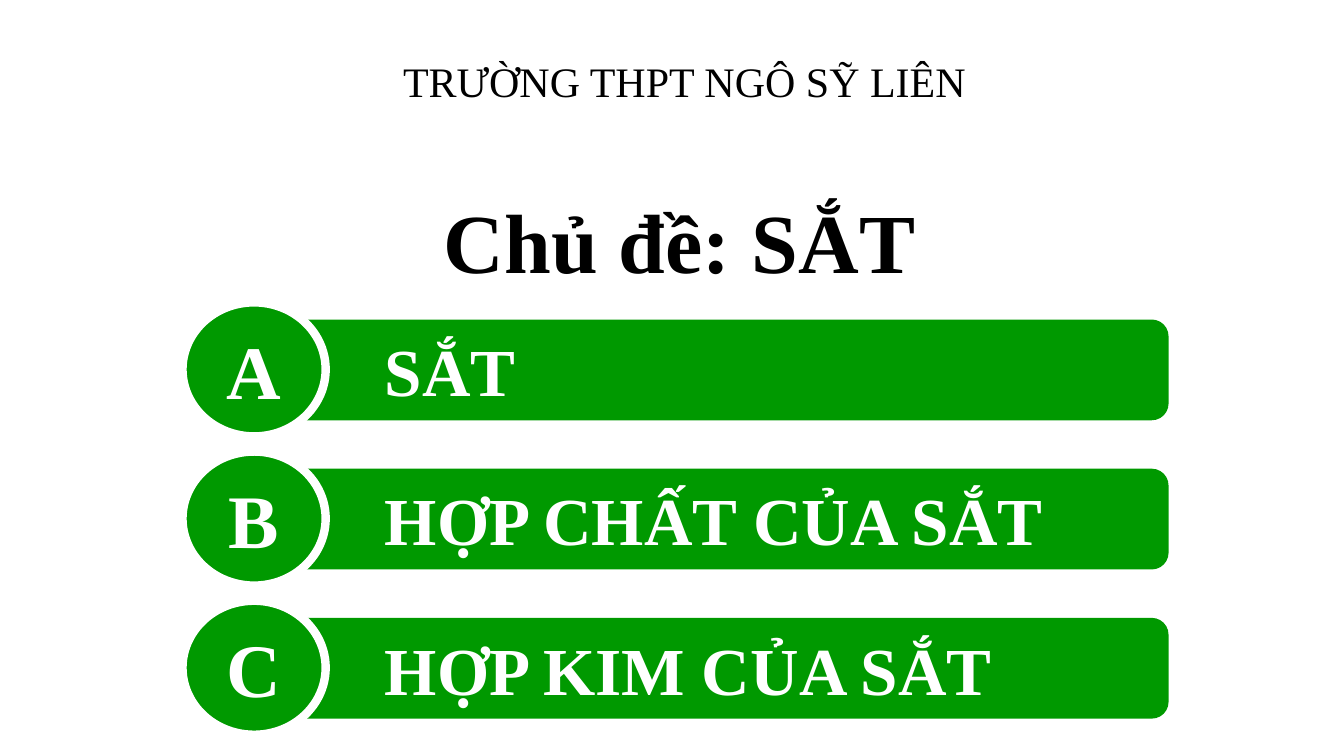
"""Build the title slide for the topic of iron with its three sections."""
from dataclasses import dataclass

from pptx import Presentation
from pptx.dml.color import RGBColor
from pptx.enum.shapes import MSO_SHAPE
from pptx.enum.text import MSO_ANCHOR, MSO_AUTO_SIZE, PP_ALIGN
from pptx.shapes.autoshape import Shape
from pptx.slide import Slide
from pptx.util import Inches, Pt

ROUNDED = MSO_SHAPE.ROUNDED_RECTANGLE
OVAL = MSO_SHAPE.OVAL
MIDDLE = MSO_ANCHOR.MIDDLE
GROW = MSO_AUTO_SIZE.SHAPE_TO_FIT_TEXT
CENTER = PP_ALIGN.CENTER
LEFT = PP_ALIGN.LEFT

BLACK = RGBColor(0x00, 0x00, 0x00)
WHITE = RGBColor(0xFF, 0xFF, 0xFF)
GREEN = RGBColor(0x00, 0x99, 0x00)
FONT = "Times New Roman"

FIRST_TOP = 3.0
PITCH = 1.48
BAR_DROP = 0.17


@dataclass(frozen=True)
class Heading:
    text: str
    left: float
    top: float
    width: float
    height: float
    size: int
    bold: bool


@dataclass(frozen=True)
class Section:
    letter: str
    title: str


HEADINGS = [
    Heading("Chủ đề: SẮT", 2.46, 1.83, 8.56, 1.11, 60, True),
    Heading("TRƯỜNG THPT NGÔ SỸ LIÊN", 3.23, 0.5, 7.12, 0.61, 30, False),
]
SECTIONS = [
    Section("A", "SẮT"),
    Section("B", "HỢP CHẤT CỦA SẮT"),
    Section("C", "HỢP KIM CỦA SẮT"),
]


def write(shape: Shape, text: str, size: int, color: RGBColor,
          bold: bool, align: PP_ALIGN) -> None:
    """Put one formatted line of text in a shape."""
    frame = shape.text_frame
    frame.word_wrap = True
    frame.text = text
    line = frame.paragraphs[0]
    line.alignment = align
    font = line.runs[0].font
    font.name = FONT
    font.size = Pt(size)
    font.bold = bold
    font.color.rgb = color


def add_heading(slide: Slide, heading: Heading) -> None:
    """Add a centred heading."""
    box = slide.shapes.add_textbox(Inches(heading.left), Inches(heading.top),
                                   Inches(heading.width), Inches(heading.height))
    write(box, heading.text, heading.size, BLACK, heading.bold, CENTER)
    box.text_frame.auto_size = GROW


def paint_green(shape: Shape) -> None:
    """Give a shape the flat green look."""
    shape.shadow.inherit = False
    shape.fill.solid()
    shape.fill.fore_color.rgb = GREEN
    shape.line.fill.background()
    shape.text_frame.vertical_anchor = MIDDLE


def add_section(slide: Slide, section: Section, top: float) -> None:
    """Add a title bar with its lettered badge as one group."""
    group = slide.shapes.add_group_shape()
    bar = group.shapes.add_shape(ROUNDED, Inches(2.17), Inches(top + BAR_DROP),
                                 Inches(9.42), Inches(1))
    paint_green(bar)
    write(bar, section.title, 48, WHITE, True, LEFT)
    title = bar.text_frame.paragraphs[0]
    title.level = 3
    indent = title._p.get_or_add_pPr()
    indent.set("marL", str(Inches(1.5)))
    indent.set("indent", "0")

    badge = group.shapes.add_shape(OVAL, Inches(1.81), Inches(top),
                                   Inches(1.42), Inches(1.33))
    paint_green(badge)
    badge.line.color.rgb = WHITE
    badge.line.width = Pt(6)
    write(badge, section.letter, 54, WHITE, True, CENTER)


def main() -> None:
    """Create and save the slide."""
    deck = Presentation()
    deck.slide_width = Inches(13.33)
    deck.slide_height = Inches(7.5)
    slide = deck.slides.add_slide(deck.slide_layouts[6])
    for heading in HEADINGS:
        add_heading(slide, heading)
    for row, section in enumerate(SECTIONS):
        add_section(slide, section, FIRST_TOP + row * PITCH)
    deck.save("out.pptx")


if __name__ == "__main__":
    main()
